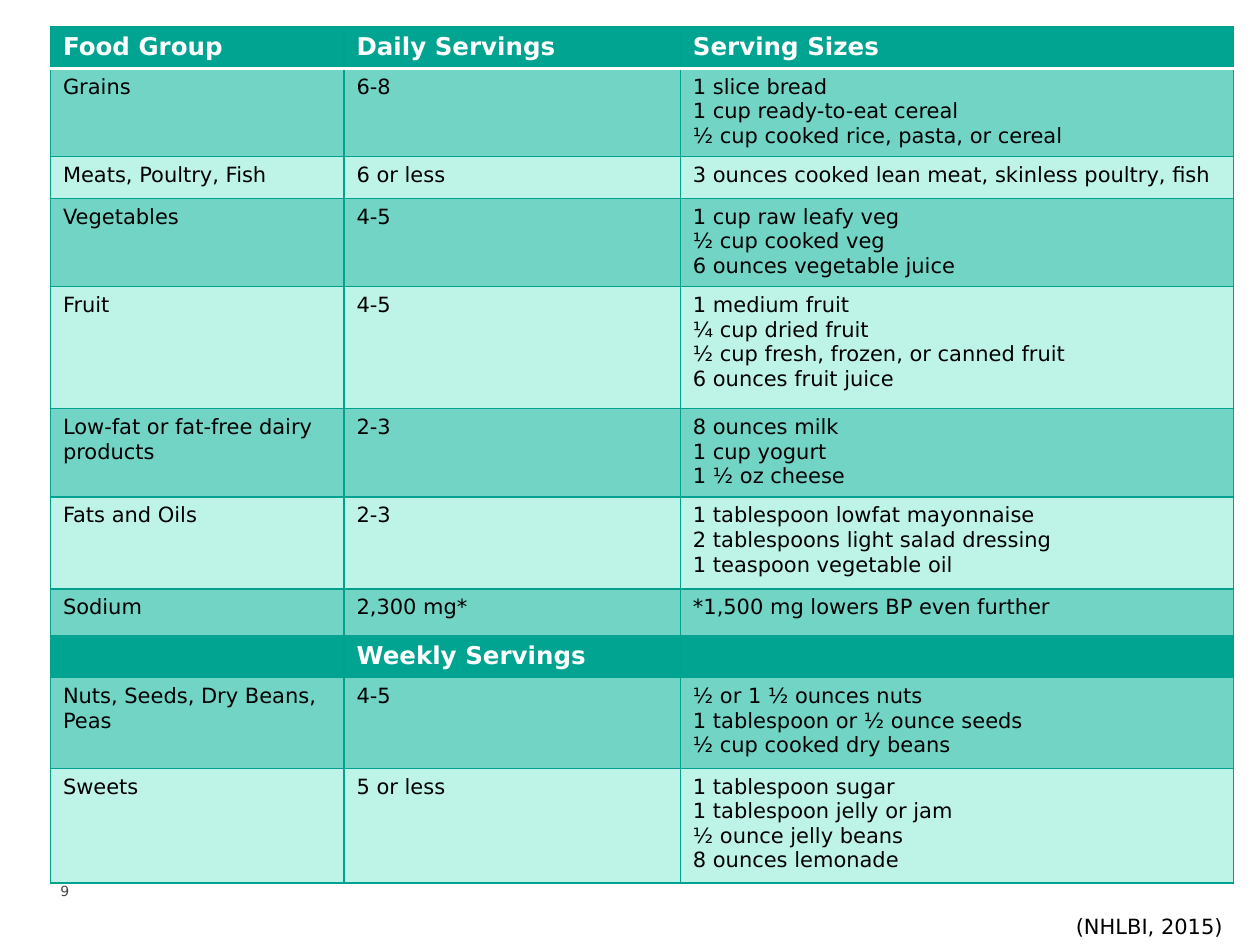
from lxml.etree import SubElement
from pptx import Presentation
from pptx.dml.color import RGBColor
from pptx.enum.text import MSO_ANCHOR as ANCHOR
from pptx.oxml.ns import qn
from pptx.util import Inches, Pt

HEADER, DARK, LIGHT = "01A490", "72D4C4", "BEF4E7"
BORDER, WHITE, BLACK, GREY = "00A18E", "FFFFFF", "000000", "464847"

COLUMNS = [2.33, 2.67, 4.39]
ROWS = [
    (0.33, HEADER, "Food Group", "Daily Servings", "Serving Sizes"),
    (0.7, DARK, "Grains", "6-8",
     "1 slice bread\n1 cup ready-to-eat cereal\n½ cup cooked rice, pasta, or cereal"),
    (0.33, LIGHT, "Meats, Poultry, Fish", "6 or less",
     "3 ounces cooked lean meat, skinless poultry, fish"),
    (0.7, DARK, "Vegetables", "4-5",
     "1 cup raw leafy veg\n½ cup cooked veg\n6 ounces vegetable juice"),
    (0.97, LIGHT, "Fruit", "4-5",
     "1 medium fruit\n¼ cup dried fruit\n½ cup fresh, frozen, or canned fruit\n6 ounces fruit juice"),
    (0.7, DARK, "Low-fat or fat-free dairy products", "2-3",
     "8 ounces milk\n1 cup yogurt\n1 ½ oz cheese"),
    (0.73, LIGHT, "Fats and Oils", "2-3",
     "1 tablespoon lowfat mayonnaise\n2 tablespoons light salad dressing\n1 teaspoon vegetable oil"),
    (0.37, DARK, "Sodium", "2,300 mg*", "*1,500 mg lowers BP even further"),
    (0.33, HEADER, "", "Weekly Servings", ""),
    (0.72, DARK, "Nuts, Seeds, Dry Beans, Peas", "4-5",
     "½ or 1 ½ ounces nuts\n1 tablespoon or ½ ounce seeds\n½ cup cooked dry beans"),
    (0.91, LIGHT, "Sweets", "5 or less",
     "1 tablespoon sugar\n1 tablespoon jelly or jam\n½ ounce jelly beans\n8 ounces lemonade"),
]


def rgb(value):
    return RGBColor.from_string(value)


class Builder:
    """Hold the text style and the current slide."""

    def __init__(self, slide, font="DejaVu Sans"):
        self.slide, self.font = slide, font

    def add_lines(self, tf, text, size, color, bold=False):
        for i, line in enumerate(text.split("\n")):
            p = tf.add_paragraph() if i else tf.paragraphs[0]
            if not line:
                SubElement(p._p, qn("a:endParaRPr"), sz=str(size * 100))
                continue
            r = p.add_run()
            r.text = line
            r.font.name, r.font.size, r.font.bold = self.font, Pt(size), bold
            r.font.color.rgb = rgb(color)

    def text(self, x, y, w, h, text, size, color, anchor=ANCHOR.TOP):
        sp = self.slide.shapes.add_textbox(Inches(x), Inches(y), Inches(w), Inches(h))
        tf = sp.text_frame
        tf.word_wrap, tf.vertical_anchor = True, anchor
        self.add_lines(tf, text, size, color)

    def border(self, cell, side, color, width):
        ln = SubElement(cell._tc.get_or_add_tcPr(), qn(f"a:ln{side}"), w=str(Pt(width)))
        SubElement(SubElement(ln, qn("a:solidFill")), qn("a:srgbClr"), val=color)

    def cell(self, cell, row, fill, text):
        rule_side = {0: "B", 1: "T"}.get(row)
        for side in "LRTB":
            color, width = (WHITE, 2) if side == rule_side else (BORDER, 0.75)
            self.border(cell, side, color, width)
        cell.fill.solid()
        cell.fill.fore_color.rgb = rgb(fill)
        style = (14, WHITE, True) if fill == HEADER else (12, BLACK)
        self.add_lines(cell.text_frame, text, *style)

    def table(self, x, y, columns, rows):
        height = sum(row[0] for row in rows)
        frame = self.slide.shapes.add_table(
            len(rows), len(columns), Inches(x), Inches(y), Inches(sum(columns)), Inches(height))
        table = frame.table
        for column, width in zip(table.columns, columns):
            column.width = Inches(width)
        for i, (height, fill, *texts) in enumerate(rows):
            table.rows[i].height = Inches(height)
            for j, text in enumerate(texts):
                self.cell(table.cell(i, j), i, fill, text)


def main():
    prs = Presentation()
    prs.slide_width, prs.slide_height = Inches(10), Inches(7.5)
    s = Builder(prs.slides.add_slide(prs.slide_layouts[6]))
    s.text(0.38, 6.95, 0.45, 0.24, "9", 8, GREY, ANCHOR.MIDDLE)
    s.text(8.44, 7.2, 1.56, 0.3, "(NHLBI, 2015)", 12, BLACK)
    s.table(0.4, 0.21, COLUMNS, ROWS)
    prs.save("out.pptx")


if __name__ == "__main__":
    main()
